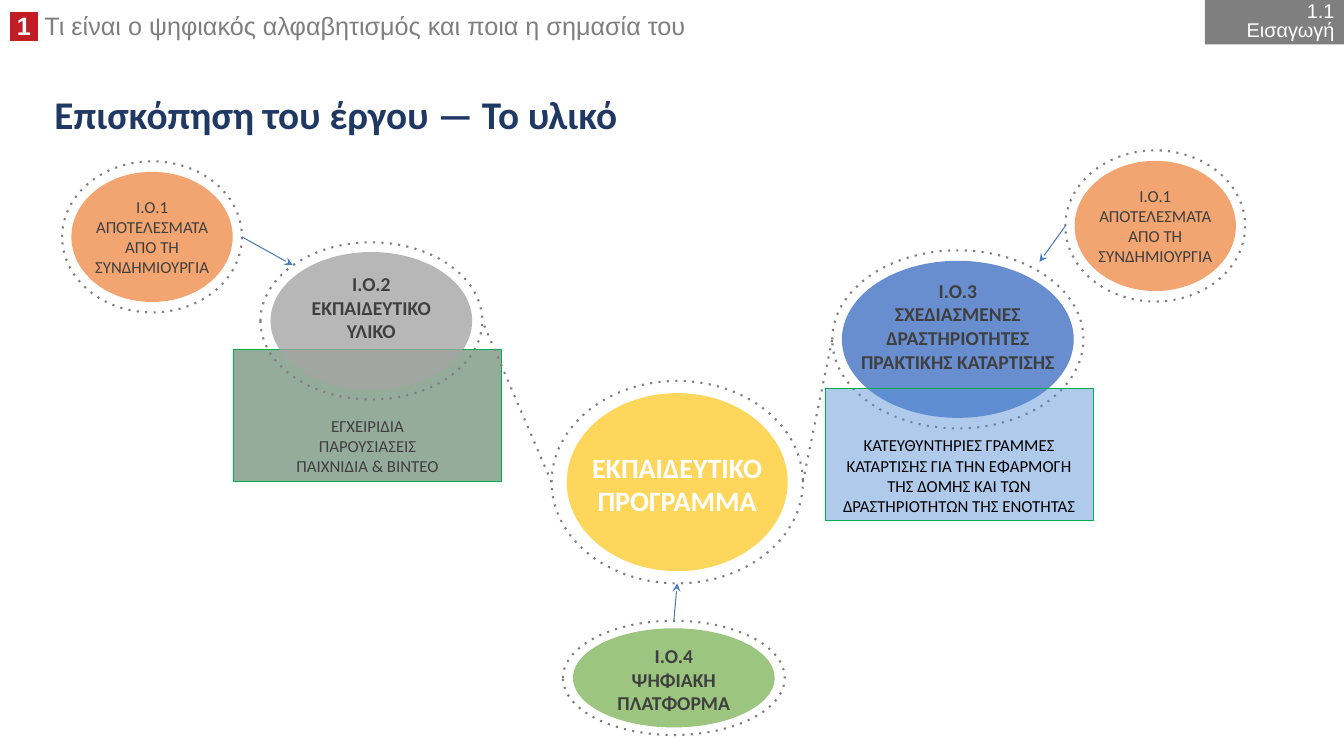
from lxml import etree
from pptx import Presentation
from pptx.enum.shapes import MSO_CONNECTOR, MSO_SHAPE
from pptx.enum.text import MSO_ANCHOR, PP_ALIGN
from pptx.oxml.ns import qn
from pptx.util import Inches, Pt

ELLIPSE, RECTANGLE = MSO_SHAPE.OVAL, MSO_SHAPE.RECTANGLE
STRAIGHT = MSO_CONNECTOR.STRAIGHT
LEFT, CENTER, RIGHT = PP_ALIGN.LEFT, PP_ALIGN.CENTER, PP_ALIGN.RIGHT
TOP, MIDDLE, BOTTOM = MSO_ANCHOR.TOP, MSO_ANCHOR.MIDDLE, MSO_ANCHOR.BOTTOM
GRAY, DARK, WHITE = "7F7F7F", "3F3F3F", "FFFFFF"

presentation = Presentation()
presentation.slide_width = Inches(13.33)
presentation.slide_height = Inches(7.5)
slide = presentation.slides.add_slide(presentation.slide_layouts[6])
shapes = slide.shapes

# Grid of 160 columns by 90 rows with square cells
CELL = presentation.slide_height / 90


def paint(fill, colour, opacity=100):
    fill.solid()
    element = etree.SubElement
    choice = fill._xPr.find(qn("a:solidFill"))
    for old in list(choice):
        choice.remove(old)
    colour_element = element(choice, qn("a:srgbClr"), val=colour)
    if opacity < 100:
        element(colour_element, qn("a:alpha"), val=str(opacity * 1000))


def write_text(shape, text, size=12, colour=DARK, bold=False, font="Calibri",
               align=CENTER, anchor=MIDDLE, spacing=1.0):
    """Continue the last paragraph; each line break opens a new one."""
    frame = shape.text_frame
    frame.word_wrap = True
    frame.vertical_anchor = anchor
    for index, line in enumerate(text.split("\n")):
        paragraph = frame.add_paragraph() if index else frame.paragraphs[-1]
        paragraph.alignment = align
        paragraph.line_spacing = spacing
        run = paragraph.add_run()
        run.text = line
        run.font.name, run.font.size, run.font.bold = font, Pt(size), bold
        paint(run.font.fill, colour)
    return run


# Nodes: centre, disc size, ring size, fill, opacity, text box size and shift
RESULTS = "I.O.1\nΑΠΟΤΕΛΈΣΜΑΤΑ ΑΠΌ ΤΗ ΣΥΝΔΗΜΙΟΥΡΓΊΑ"
SMALL = ((19.2, 15.5), (21.4, 18), "ED7D31", 69, (17.6, 10.9), 0, RESULTS, 12, DARK, False)
nodes = {
    "platform": ((80.2, 80.7), (24, 11.8), (26.4, 13.6), "70AD47", 69, (18, 9.7), 0.2,
                 "I.O.4\nΨΗΦΙΑΚΗ ΠΛΑΤΦΟΡΜΑ", 14, DARK, True),
    "programme": ((80.6, 57.4), (26.3, 21.2), (29.9, 24.1), "FFC000", 64, (25.2, 9.2), 0.2,
                  "ΕΚΠΑΙΔΕΥΤΙΚΟ ΠΡΟΓΡΑΜΜΑ", 20, WHITE, True),
    "activities": ((114, 40.4), (27.6, 18.7), (29.9, 21.2), "4472C4", 80, (28.8, 12.5), -1.6,
                   "I.O.3\nΣΧΕΔΙΑΣΜΈΝΕΣ ΔΡΑΣΤΗΡΙΌΤΗΤΕΣ ΠΡΑΚΤΙΚΉΣ ΚΑΤΆΡΤΙΣΗΣ",
                   14, DARK, True),
    "material": ((44.2, 38.2), (24, 16.4), (26.4, 18.7), "A5A5A5", 80, (25.2, 9.7), -1.6,
                 "I.O.2\nΕΚΠΑΙΔΕΥΤΙΚΌ\nΥΛΙΚΟ", 14, DARK, True),
    "results left": ((18.1, 28.2), *SMALL),
    "results right": ((137.5, 26.9), *SMALL),
}
for (x, y), disc_size, ring_size, fill, opacity, box_size, shift, text, size, colour, bold in nodes.values():
    disc, ring = [
        shapes.add_shape(ELLIPSE, *[int(v * CELL) for v in (x - w / 2, y - h / 2, w, h)])
        for w, h in (disc_size, ring_size)
    ]
    disc.shadow.inherit = ring.shadow.inherit = False
    paint(disc.fill, fill, opacity)
    disc.line.fill.background()
    ring.fill.background()
    paint(ring.line.fill, GRAY)
    ring.line.width = Pt(1.5)
    etree.SubElement(ring.line._get_or_add_ln(), qn("a:prstDash"), val="dot")
    w, h = box_size
    label = shapes.add_textbox(*[int(v * CELL) for v in (x - w / 2, y + shift - h / 2, w, h)])
    write_text(label, text, size=size, colour=colour, bold=bold)

# Panels: the material one lies behind the nodes, the other in front
panels = [
    (27.8, 41.6, "214F29", 47, DARK, True, "ΕΓΧΕΙΡΊΔΙΑ\nΠΑΡΟΥΣΙΆΣΕΙΣ\nΠΑΙΧΝΙΔΙΑ & ΒΙΝΤΕΟ"),
    (98.2, 46.3, "538CD5", 46, "000000", False,
     "ΚΑΤΕΥΘΥΝΤΉΡΙΕΣ ΓΡΑΜΜΈΣ ΚΑΤΆΡΤΙΣΗΣ ΓΙΑ ΤΗΝ ΕΦΑΡΜΟΓΉ ΤΗΣ ΔΟΜΉΣ ΚΑΙ ΤΩΝ "
     "ΔΡΑΣΤΗΡΙΟΤΉΤΩΝ ΤΗΣ ΕΝΌΤΗΤΑΣ"),
]
for x, y, fill, opacity, colour, behind, text in panels:
    panel = shapes.add_shape(RECTANGLE, *[int(v * CELL) for v in (x, y, 31.9, 15.7)])
    panel.shadow.inherit = False
    paint(panel.fill, fill, opacity)
    paint(panel.line.fill, "00B050")
    panel.line.width = Pt(0.75)
    write_text(panel, text, colour=colour, anchor=BOTTOM)
    if behind:
        shapes[0]._element.addprevious(panel._element)

# Links: ends are given as shares of each ring's half width and half height
links = [
    ("programme", (1, 0), "activities", (-1, 0), False),
    ("programme", (-1, 0), "material", (1, 0), False),
    ("results left", (1, 0), "material", (-0.71, -0.71), True),
    ("results right", (-1, 0), "activities", (0.65, -0.87), True),
    ("platform", (0, -1), "programme", (0, 1), True),
]
for start, start_share, end, end_share, arrow in links:
    ends = []
    for name, shares in ((start, start_share), (end, end_share)):
        centre, ring_size = nodes[name][0], nodes[name][2]
        ends += [int((c + s * d / 2) * CELL) for c, s, d in zip(centre, shares, ring_size)]
    link = shapes.add_connector(STRAIGHT, *ends)
    etree.SubElement(link._element.spPr, qn("a:effectLst"))
    paint(link.line.fill, "4A7DBA" if arrow else GRAY)
    link.line.width = Pt(0.75 if arrow else 1.5)
    line = link.line._get_or_add_ln()
    if arrow:
        etree.SubElement(line, qn("a:tailEnd"), type="stealth")
    else:
        etree.SubElement(line, qn("a:prstDash"), val="dot")

# Header with the highlighted chapter number
header = shapes.add_textbox(*[int(v * CELL) for v in (0, 1.3, 114.2, 4.1)])
header_format = dict(size=18, font="Arial", align=LEFT, anchor=TOP, spacing=0.8)
number = write_text(header, " 1 ", colour=WHITE, bold=True, **header_format)
highlight = etree.Element(qn("a:highlight"))
etree.SubElement(highlight, qn("a:srgbClr"), val="C01E24")
number.font.fill._xPr.find(qn("a:solidFill")).addnext(highlight)
write_text(header, " Τι είναι ο ψηφιακός αλφαβητισμός και ποια η σημασία του",
           colour=GRAY, **header_format)

# Section tag in the corner
tag = shapes.add_shape(RECTANGLE, *[int(v * CELL) for v in (143.4, 0, 16.6, 5.3)])
tag.shadow.inherit = False
paint(tag.fill, GRAY)
tag.line.fill.background()
write_text(tag, "1.1 Εισαγωγή", size=14.2, colour=WHITE, font="Arial", align=RIGHT, spacing=0.8)

# Title
title = shapes.add_textbox(*[int(v * CELL) for v in (5.3, 10, 145.2, 7.9)])
write_text(title, "Επισκόπηση του έργου — Το υλικό", size=28, colour="203864", bold=True,
           align=LEFT, spacing=0.9)

presentation.save("out.pptx")
